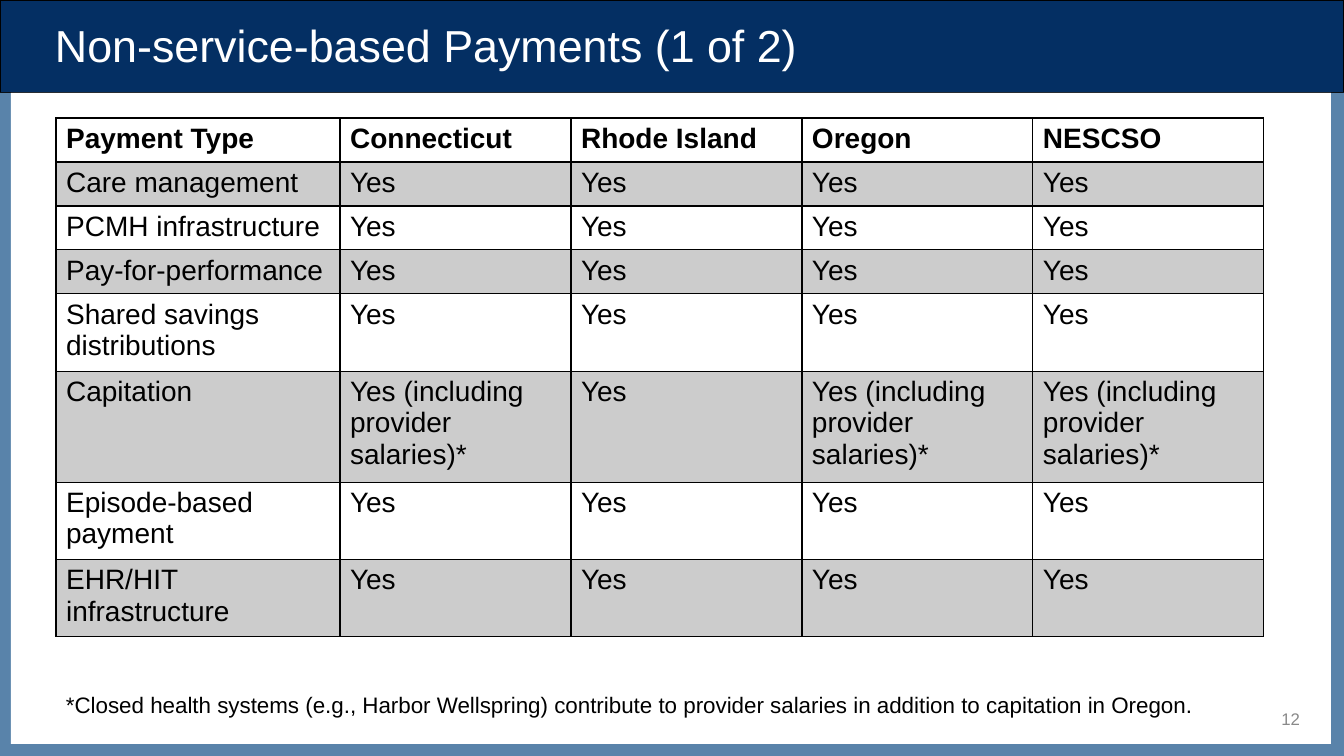
from lxml.etree import SubElement
from pptx import Presentation
from pptx.dml.color import RGBColor
from pptx.enum.shapes import MSO_SHAPE as Shape
from pptx.enum.text import MSO_ANCHOR as Anchor, PP_ALIGN as Align
from pptx.oxml.ns import qn
from pptx.util import Pt

WIDTH, HEIGHT = 1344, 756
SCALE = 12192000 / WIDTH

BLACK = RGBColor(0x00, 0x00, 0x00)
WHITE = RGBColor(0xFF, 0xFF, 0xFF)
NAVY = RGBColor(0x04, 0x2F, 0x63)
STEEL = RGBColor(0x59, 0x83, 0xAA)
GRAY = RGBColor(0x89, 0x89, 0x89)

SHADE_ALPHA = 20
COLUMN_WIDTHS = [284] + [231] * 4
LINE_HEIGHTS = {1: 44, 2: 77, 3: 111}

SALARIES = "Yes (including provider salaries)*"
ALL_YES = ["Yes"] * 4
PAYMENTS = [
    (1, ["Payment Type", "Connecticut", "Rhode Island", "Oregon", "NESCSO"]),
    (1, ["Care management", *ALL_YES]),
    (1, ["PCMH infrastructure", *ALL_YES]),
    (1, ["Pay-for-performance", *ALL_YES]),
    (2, ["Shared savings distributions", *ALL_YES]),
    (3, ["Capitation", SALARIES, "Yes", SALARIES, SALARIES]),
    (2, ["Episode-based payment", *ALL_YES]),
    (2, ["EHR/HIT infrastructure", *ALL_YES]),
]


def px(length):
    return round(length * SCALE)


def write(frame, text, size=20, color=BLACK, bold=False, align=Align.LEFT, font="Arial"):
    para = frame.paragraphs[0]
    para.alignment = align
    span = para.add_run()
    span.text = text
    span.font.name = font
    span.font.size = Pt(size)
    span.font.bold = bold
    span.font.color.rgb = color


class PageBuilder:
    def __init__(self, deck):
        self.page = deck.slides.add_slide(deck.slide_layouts[6])

    def panel(self, left, top, width, height, fill, line=None):
        box = self.page.shapes.add_shape(
            Shape.RECTANGLE, px(left), px(top), px(width), px(height))
        box.shadow.inherit = False
        box.fill.solid()
        box.fill.fore_color.rgb = fill
        if line is None:
            box.line.fill.background()
        else:
            box.line.color.rgb = line
            box.line.width = Pt(0.75)

    def text(self, left, top, width, height, text, anchor=Anchor.MIDDLE, **style):
        box = self.page.shapes.add_textbox(px(left), px(top), px(width), px(height))
        box.text_frame.word_wrap = True
        box.text_frame.vertical_anchor = anchor
        write(box.text_frame, text, **style)

    def table(self, left, top, rows, widths):
        heights = [LINE_HEIGHTS[lines] for lines, _ in rows]
        table = self.page.shapes.add_table(
            len(rows), len(widths), px(left), px(top),
            px(sum(widths)), px(sum(heights))).table
        for column, width in zip(table.columns, widths):
            column.width = px(width)
        for index, (_, texts) in enumerate(rows):
            table.rows[index].height = px(heights[index])
            for cell, text in zip(table.rows[index].cells, texts):
                write(cell.text_frame, text, bold=index == 0)
                self.borders(cell)
                self.shade(cell, index % 2 == 1)

    def borders(self, cell):
        properties = cell._tc.get_or_add_tcPr()
        for side in ("a:lnL", "a:lnR", "a:lnT", "a:lnB"):
            line = SubElement(properties, qn(side), w=str(Pt(1)))
            fill = SubElement(line, qn("a:solidFill"))
            SubElement(fill, qn("a:srgbClr"), val=str(BLACK))

    def shade(self, cell, shaded):
        if not shaded:
            cell.fill.background()
            return
        cell.fill.solid()
        cell.fill.fore_color.rgb = BLACK
        color = cell._tc.tcPr.find(qn("a:solidFill")).find(qn("a:srgbClr"))
        SubElement(color, qn("a:alpha"), val=str(SHADE_ALPHA * 1000))


def main():
    deck = Presentation()
    deck.slide_width, deck.slide_height = px(WIDTH), px(HEIGHT)
    builder = PageBuilder(deck)
    builder.panel(0, 0, 1344, 93, NAVY, line=BLACK)
    builder.panel(0, 93, 1344, 663, STEEL)
    builder.panel(11, 93, 1320, 651, WHITE)
    builder.text(45, 8, 1254, 73, "Non-service-based Payments (1 of 2)", size=32, color=WHITE)
    builder.text(1232, 706, 78, 25, "12", size=12, color=GRAY, align=Align.RIGHT)
    builder.text(
        56, 686, 1210, 37,
        "*Closed health systems (e.g., Harbor Wellspring) contribute to provider "
        "salaries in addition to capitation in Oregon.",
        anchor=Anchor.TOP, size=16)
    builder.table(56, 118, PAYMENTS, COLUMN_WIDTHS)
    deck.save("out.pptx")


if __name__ == "__main__":
    main()
